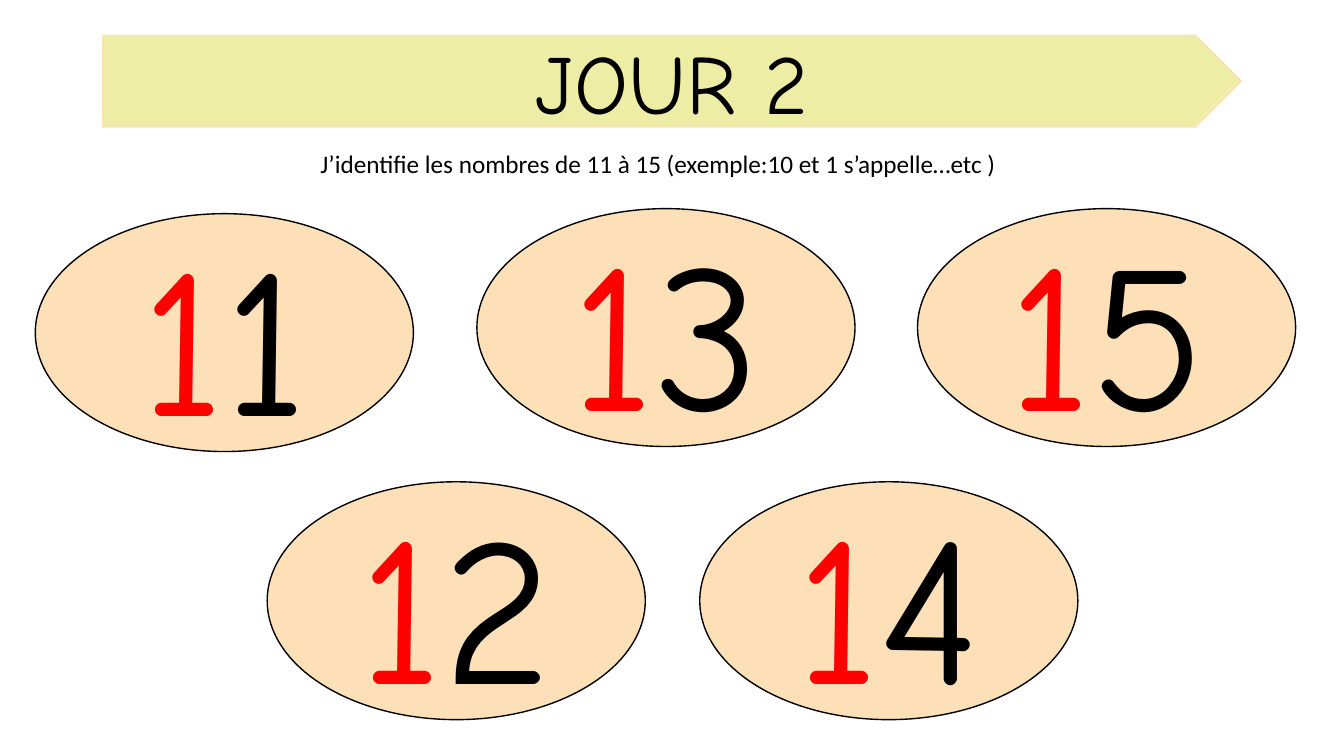
from pptx import Presentation
from pptx import util as u
from pptx.dml.color import RGBColor
from pptx.enum import shapes, text

In = u.Inches
BLACK, RED = "000000", "FF0000"
GREEN, PEACH = "EDEDA6", "FDE0B8"
HAND, PLAIN = "Comic Neue", "Calibri"


def rgb(value):
    return RGBColor.from_string(value)


def add_run(p, words, size, font, color):
    r = p.add_run()
    r.text = words
    r.font.size = u.Pt(size)
    r.font.name = font
    r.font.color.rgb = rgb(color)


def add_filled(s, kind, x, y, w, h, fill, line):
    sp = s.shapes.add_shape(kind, In(x), In(y), In(w), In(h))
    sp.shadow.inherit = False
    sp.fill.solid()
    sp.fill.fore_color.rgb = rgb(fill)
    sp.line.color.rgb = rgb(line)
    sp.line.width = u.Pt(1)
    return sp


def add_title(s, words):
    add_filled(s, shapes.MSO_SHAPE.PENTAGON, 1.02, 0.35, 11.29, 0.91, GREEN, PEACH)
    sp = s.shapes.title
    sp.left, sp.top, sp.width, sp.height = In(2.91), In(0.25), In(7.51), In(1.11)
    # Bring the title in front of its banner
    s.shapes._spTree.append(sp._element)
    tf = sp.text_frame
    tf.auto_size = text.MSO_AUTO_SIZE.NONE
    tf.vertical_anchor = text.MSO_ANCHOR.TOP
    p = tf.paragraphs[0]
    p.alignment = text.PP_ALIGN.CENTER
    add_run(p, words, 60, HAND, BLACK)


def add_instruction(s, words):
    tf = s.shapes.add_textbox(In(3.08), In(1.42), In(7.04), In(0.4)).text_frame
    tf.word_wrap = True
    add_run(tf.paragraphs[0], words, 18, PLAIN, BLACK)


def add_number(s, tens, units, x, y):
    sp = add_filled(s, shapes.MSO_SHAPE.OVAL, x, y, 3.75, 2.36, PEACH, BLACK)
    tf = sp.text_frame
    tf.vertical_anchor = text.MSO_ANCHOR.MIDDLE
    p = tf.paragraphs[0]
    p.alignment = text.PP_ALIGN.CENTER
    add_run(p, tens, 150, HAND, RED)
    add_run(p, units, 150, HAND, BLACK)


def main():
    prs = Presentation()
    prs.slide_width, prs.slide_height = In(13.33), In(7.5)
    s = prs.slides.add_slide(prs.slide_layouts[5])

    # Heading
    add_title(s, "JOUR 2")
    add_instruction(s, "J’identifie les nombres de 11 à 15 (exemple:10 et 1 s’appelle…etc )")

    # Numbers: odd ones in the upper row, even ones in the lower row
    places = [(0.35, 2.12), (2.65, 4.78), (4.73, 2.07), (6.94, 4.78), (9.1, 2.07)]
    for number, (x, y) in enumerate(places, start=11):
        tens, units = str(number)
        add_number(s, tens, units, x, y)

    prs.save("out.pptx")


if __name__ == "__main__":
    main()
